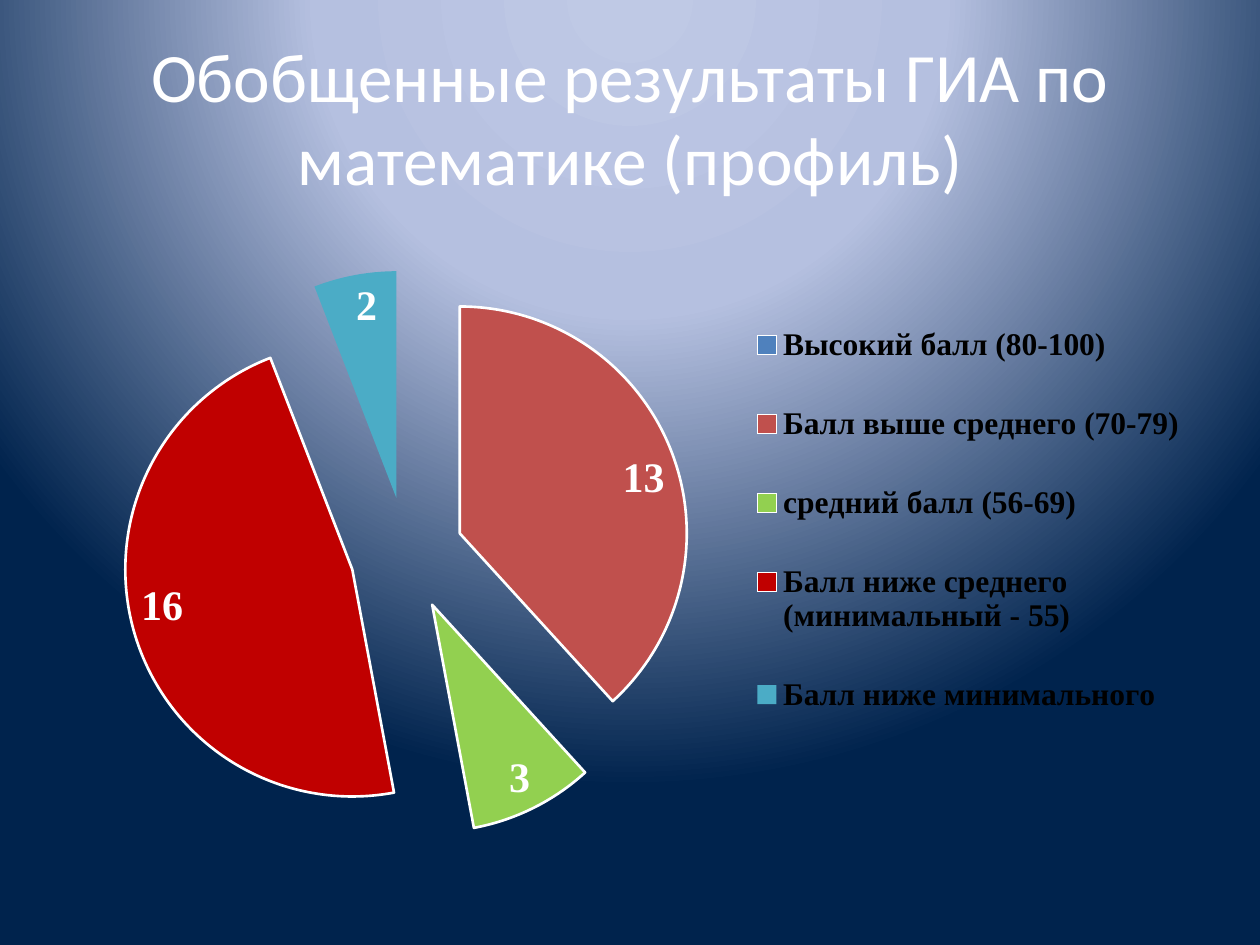
from dataclasses import dataclass
from typing import NamedTuple, Optional

from lxml.etree import SubElement
from pptx import Presentation
from pptx.chart.data import CategoryChartData
from pptx.dml.color import RGBColor
from pptx.enum.chart import XL_CHART_TYPE, XL_LABEL_POSITION, XL_LEGEND_POSITION
from pptx.enum.text import MSO_ANCHOR, PP_ALIGN
from pptx.oxml import parse_xml
from pptx.oxml.ns import nsdecls, qn
from pptx.util import Inches, Pt


@dataclass(frozen=True)
class Theme:
    white: str = "FFFFFF"
    black: str = "000000"
    background: tuple = ((0, "BFC9E5"), (40, "B5C0E0"), (100, "00234D"))
    title_font: str = "Calibri"
    chart_font: str = "Times New Roman"
    title_size: float = 39.6
    legend_size: float = 18
    label_size: float = 24
    outline: float = 1.5


class Slice(NamedTuple):
    name: str
    value: int
    color: str
    outlined: bool = True


class Box(NamedTuple):
    x: float
    y: float
    w: float
    h: float


THEME = Theme()
SLICES = (
    Slice("Высокий балл (80-100)", 0, "4F81BD"),
    Slice("Балл выше среднего (70-79)", 13, "C0504D"),
    Slice("средний балл (56-69)", 3, "92D050"),
    Slice("Балл ниже среднего (минимальный - 55)", 16, "C00000"),
    Slice("Балл ниже минимального", 2, "4BACC6", outlined=False),
)
TITLE_BOX = Box(0.5, 0.3, 9, 1.25)
CHART_BOX = Box(0.53, 1.7, 9, 4.95)
PLOT_PART = Box(0.04, 0.09, 0.52, 0.91)
LEGEND_PART = Box(0.6, 0.11, 0.39, 0.76)
EXPLOSION = 25


def rgb(color: str) -> RGBColor:
    return RGBColor.from_string(color)


def inches(box: Box) -> list:
    return [Inches(v) for v in box]


def set_font(font, name: str, size: float, color: str, bold: bool = False) -> None:
    font.name, font.size, font.bold = name, Pt(size), bold
    font.color.rgb = rgb(color)


def add_text(s, box: Box, text: str, *, font: str, size: float, color: str,
             bold: bool = False, align=PP_ALIGN.CENTER, anchor=MSO_ANCHOR.MIDDLE) -> None:
    tf = s.shapes.add_textbox(*inches(box)).text_frame
    tf.word_wrap, tf.vertical_anchor = True, anchor
    p = tf.paragraphs[0]
    p.alignment = align
    r = p.add_run()
    r.text = text
    set_font(r.font, font, size, color, bold)


def set_background(s, stops: tuple) -> None:
    """Radial gradient centred above the top edge of the slide."""
    s.background.fill.solid()
    bg = s.background.fill._xPr
    stops_xml = "".join(
        f'<a:gs pos="{pos * 1000}"><a:srgbClr val="{color}"/></a:gs>' for pos, color in stops)
    grad = parse_xml(
        f'<a:gradFill {nsdecls("a")} rotWithShape="1"><a:gsLst>{stops_xml}</a:gsLst>'
        '<a:path path="circle"><a:fillToRect l="50000" t="-80000" r="50000" b="180000"/>'
        '</a:path></a:gradFill>')
    bg.replace(bg.find(qn("a:solidFill")), grad)


def set_layout(element, part: Box, after: Optional[str] = None, inner: bool = False) -> None:
    """Place a chart part by fractions of the chart's size."""
    for old in element.findall(qn("c:layout")):
        element.remove(old)
    layout = parse_xml(f'<c:layout {nsdecls("c")}/>')
    manual = SubElement(layout, qn("c:manualLayout"))
    values = [("layoutTarget", "inner")] if inner else []
    values += [("xMode", "edge"), ("yMode", "edge")]
    values += [(key, str(v)) for key, v in zip("xywh", part)]
    for tag, value in values:
        SubElement(manual, qn(f"c:{tag}")).set("val", value)
    if after:
        element.find(qn(after)).addnext(layout)
    else:
        element.insert(0, layout)


def add_pie(s, box: Box, slices: tuple) -> None:
    data = CategoryChartData()
    data.categories = [item.name for item in slices]
    data.add_series("Series 1", [item.value for item in slices])
    chart = s.shapes.add_chart(XL_CHART_TYPE.PIE, *inches(box), data).chart
    chart.has_title = False
    set_font(chart.font, THEME.title_font, 10, THEME.white)

    chart.has_legend = True
    legend = chart.legend
    legend.position, legend.include_in_layout = XL_LEGEND_POSITION.RIGHT, False
    set_font(legend.font, THEME.chart_font, THEME.legend_size, THEME.black, bold=True)
    set_layout(legend._element, LEGEND_PART, after="c:legendPos")

    plot = chart.plots[0]
    plot.vary_by_categories = True
    set_layout(plot._element.getparent(), PLOT_PART, inner=True)
    series = plot.series[0]
    for i, item in enumerate(slices):
        point = series.points[i].format
        point.fill.solid()
        point.fill.fore_color.rgb = rgb(item.color)
        if item.outlined:
            point.line.color.rgb = rgb(THEME.white)
            point.line.width = Pt(THEME.outline)
        else:
            point.line.fill.background()
    explosion = parse_xml(f'<c:explosion {nsdecls("c")} val="{EXPLOSION}"/>')
    series._element.find(qn("c:dPt")).addprevious(explosion)

    labels = series.data_labels
    labels.show_value = True
    labels.number_format, labels.number_format_is_linked = "0;;", False  # zero stays blank
    labels.position = XL_LABEL_POSITION.INSIDE_END
    set_font(labels.font, THEME.chart_font, THEME.label_size, THEME.white, bold=True)


def main() -> None:
    prs = Presentation()
    prs.slide_width, prs.slide_height = Inches(10), Inches(7.5)
    s = prs.slides.add_slide(prs.slide_layouts[6])
    set_background(s, THEME.background)
    add_text(s, TITLE_BOX, "Обобщенные результаты ГИА по математике (профиль)",
             font=THEME.title_font, size=THEME.title_size, color=THEME.white)
    add_pie(s, CHART_BOX, SLICES)
    prs.save("out.pptx")


if __name__ == "__main__":
    main()
